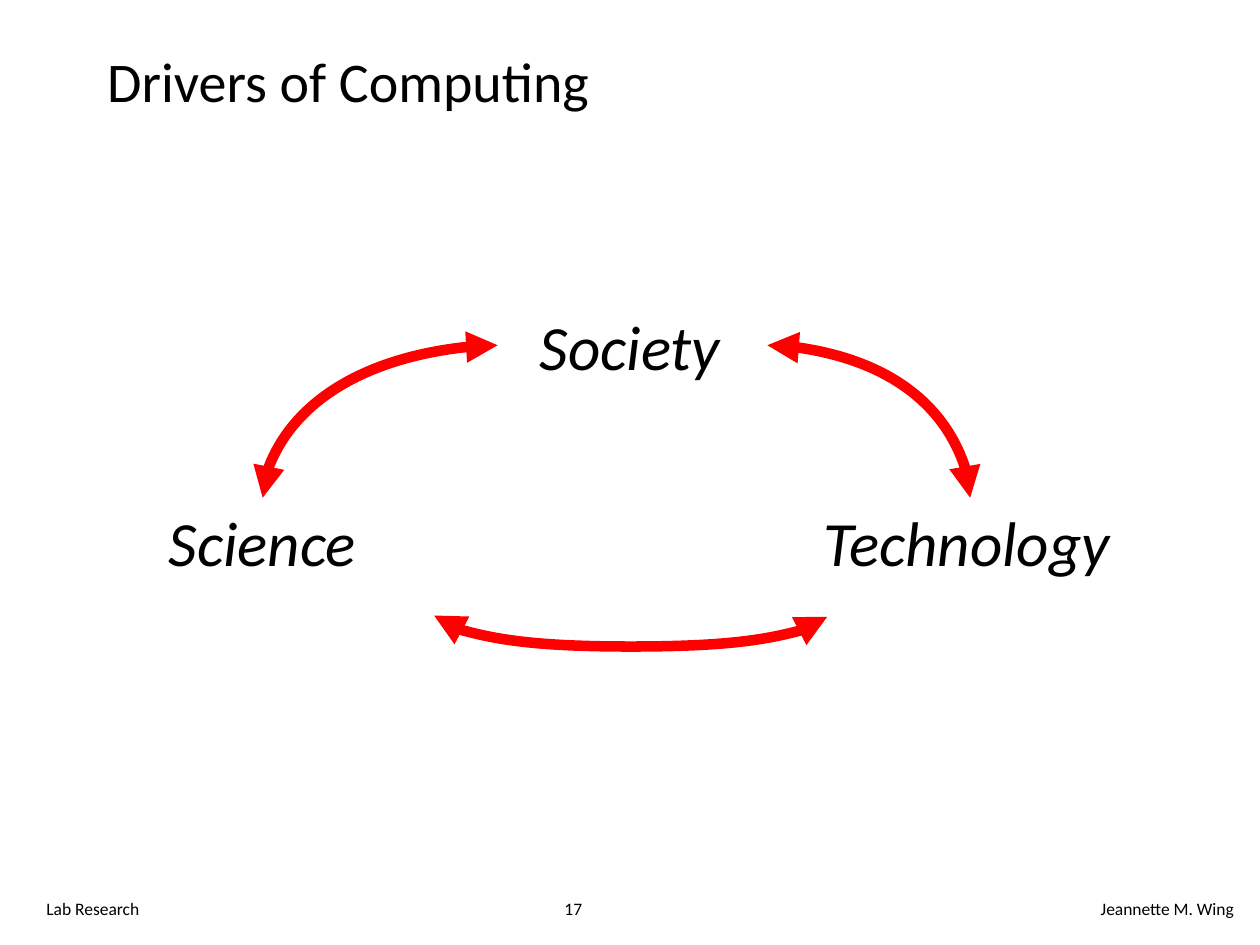
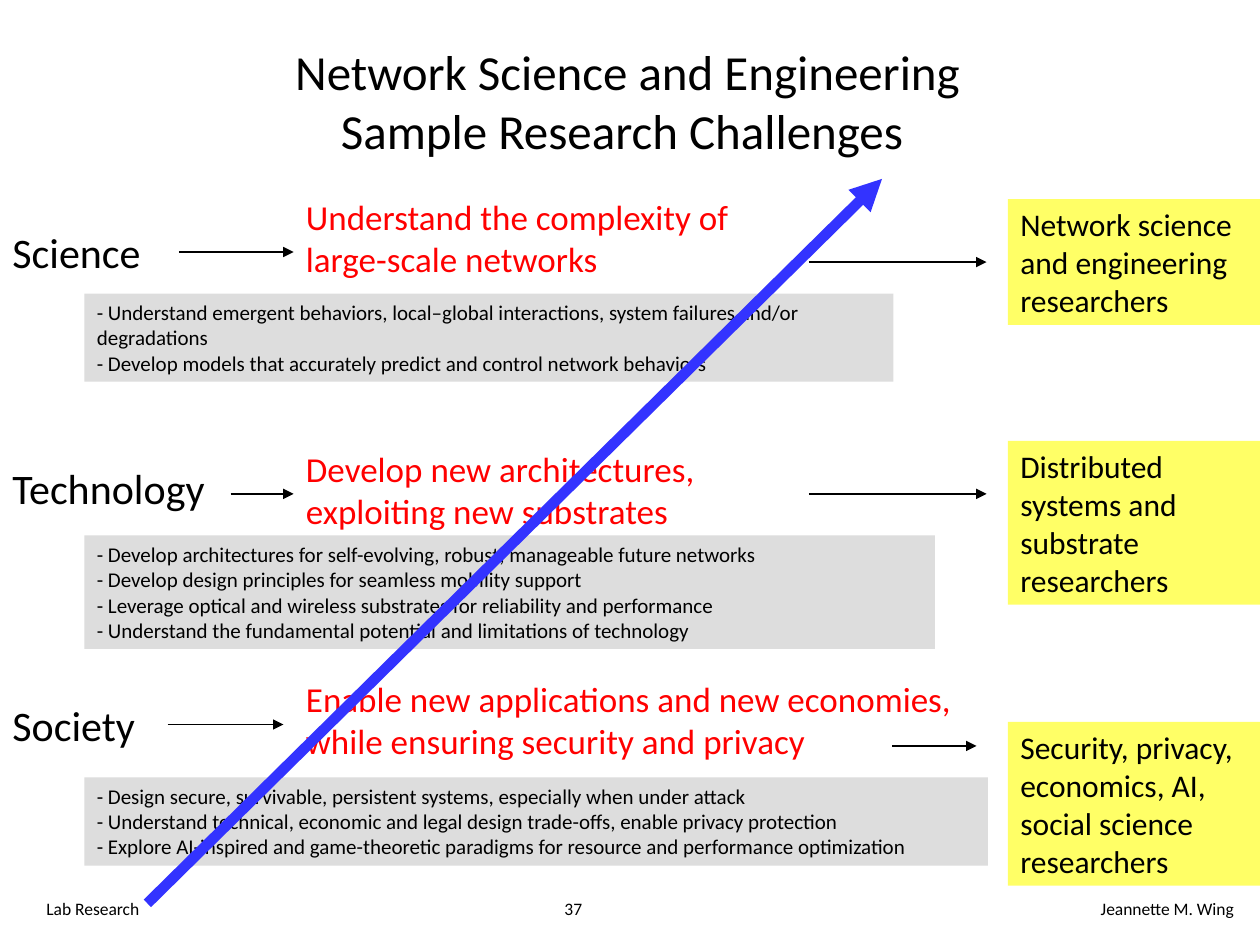
from dataclasses import dataclass

from lxml import etree
from pptx import Presentation
from pptx.dml.color import RGBColor
from pptx.enum import shapes, text
from pptx.oxml import ns
from pptx.util import Inches, Pt

FONT = "Calibri"
BLACK, RED, BLUE = "000000", "FF0000", "3333FF"
GREY, YELLOW = "DDDDDD", "FFFF66"
LEFT, CENTER, RIGHT = text.PP_ALIGN.LEFT, text.PP_ALIGN.CENTER, text.PP_ALIGN.RIGHT
STRAIGHT, CURVE = shapes.MSO_CONNECTOR.STRAIGHT, shapes.MSO_CONNECTOR.CURVE


def rgb(value):
    return RGBColor.from_string(value)


# Shared helpers
def write(tf, words, size, color=BLACK, align=LEFT, italic=False):
    tf.text = words
    for p in tf.paragraphs:
        p.alignment = align
        for r in p.runs:
            r.font.name = FONT
            r.font.size = Pt(size)
            r.font.italic = italic
            r.font.color.rgb = rgb(color)


def add_text(s, box, words, size, wrap=True, **style):
    sp = s.shapes.add_textbox(*map(Inches, box))
    sp.text_frame.word_wrap = wrap
    write(sp.text_frame, words, size, **style)
    return sp


def add_panel(s, box, words, size, fill):
    sp = s.shapes.add_shape(shapes.MSO_SHAPE.RECTANGLE, *map(Inches, box))
    sp.shadow.inherit = False
    sp.fill.solid()
    sp.fill.fore_color.rgb = rgb(fill)
    sp.line.fill.background()
    tf = sp.text_frame
    tf.word_wrap = True
    tf.vertical_anchor = text.MSO_ANCHOR.TOP
    write(tf, words, size)
    return sp


def add_arrow(s, start, end, color=BLACK, width=0.75, kind=STRAIGHT, both=False):
    c = s.shapes.add_connector(kind, *map(Inches, (*start, *end)))
    c.line.color.rgb = rgb(color)
    c.line.width = Pt(width)
    ln = c.line._get_or_add_ln()
    for tag in ["a:headEnd", "a:tailEnd"] if both else ["a:tailEnd"]:
        etree.SubElement(ln, ns.qn(tag), type="triangle")
    etree.SubElement(c._element.spPr, ns.qn("a:effectLst"))
    return c


def bend(c, preset, turn=0, reach=None):
    """Choose the curve's preset, its rotation in degrees and its bulge."""
    c._element.spPr.find(ns.qn("a:xfrm")).set("rot", str(turn * 60000))
    geom = c._element.spPr.find(ns.qn("a:prstGeom"))
    geom.set("prst", preset)
    if reach is not None:
        guides = geom.find(ns.qn("a:avLst"))
        if guides is None:
            guides = etree.SubElement(geom, ns.qn("a:avLst"))
        etree.SubElement(guides, ns.qn("a:gd"), name="adj1",
                         fmla=f"val {round(reach * 100000)}")


def add_footer(s, number):
    for left, width, words, align in [(0.27, 2.08, "Lab Research", LEFT),
                                      (3.51, 2.08, str(number), CENTER),
                                      (6.91, 2.98, "Jeannette M. Wing", RIGHT)]:
        add_text(s, (left, 7.08, width, 0.33), words, 10, align=align)


def new_slide(prs, number, title, box, size, align):
    s = prs.slides.add_slide(prs.slide_layouts[5])
    sp = s.shapes.title
    sp.left, sp.top, sp.width, sp.height = map(Inches, box)
    tf = sp.text_frame
    tf.auto_size = text.MSO_AUTO_SIZE.NONE
    tf.vertical_anchor = text.MSO_ANCHOR.MIDDLE
    write(tf, title, size, align=align)
    add_footer(s, number)
    return s


# Cycle of three drivers
def add_driver_cycle(s, x, y):
    style = dict(size=36, italic=True)
    science = add_text(s, (x, y + 1.56, 1.69, 0.7), "Science", wrap=False, **style)
    society = add_text(s, (x + 2.71, y, 2.1, 0.7), "Society", align=CENTER, **style)
    technology = add_text(s, (x + 5.2, y + 1.56, 2.52, 0.7), "Technology",
                          wrap=False, **style)

    curve = dict(color=RED, width=6, kind=CURVE, both=True)
    to_science = add_arrow(s, (x + 2.71, y + 0.35), (x + 0.85, y + 1.56), **curve)
    to_science.begin_connect(society, 1)
    to_science.end_connect(science, 0)
    bend(to_science, "curvedConnector2")

    to_technology = add_arrow(s, (x + 4.85, y + 0.35), (x + 6.46, y + 1.56), **curve)
    to_technology.end_connect(technology, 0)
    bend(to_technology, "curvedConnector2")

    # A thin upright curve, turned to lie below the two lower words
    across = add_arrow(s, (x + 3.77, y + 0.94), (x + 3.76, y + 4.06), **curve)
    bend(across, "curvedConnector3", turn=270, reach=25)


# Rows of research challenges; offsets are measured from the row's top
@dataclass
class Challenge:
    top: float
    label: str
    label_dy: float
    label_width: float
    goal: str
    goal_width: float
    details: list
    details_box: tuple  # dy, width, height
    arrow_in: tuple     # start, end, dy
    arrow_out: tuple
    people: str
    people_box: tuple   # dy, height


CHALLENGES = [
    Challenge(1.5, "Science", 0.25, 1.42,
              "Understand the complexity of large-scale networks", 4.17,
              ["- Understand emergent behaviors, local–global interactions, "
               "system failures and/or degradations",
               "- Develop models that accurately predict and control network behaviors"],
              (0.83, 6.42, 0.7), (1.42, 2.33, 0.5), (6.42, 7.83, 0.58),
              "Network science and engineering researchers", (0.08, 1)),
    Challenge(3.5, "Technology", 0.12, 2.25,
              "Develop new architectures, exploiting new substrates", 4.33,
              ["- Develop architectures for self-evolving, robust, manageable future networks",
               "- Develop design principles for seamless mobility support",
               "- Leverage optical and wireless substrates for reliability and performance",
               "- Understand the fundamental potential and limitations of technology"],
              (0.75, 6.75, 0.9), (1.83, 2.33, 0.42), (6.42, 7.83, 0.42),
              "Distributed systems and substrate researchers", (0, 1.3)),
    Challenge(5.33, "Society", 0.17, 1.67,
              "Enable new applications and new economies, "
              "while ensuring security and privacy", 5.83,
              ["- Design secure, survivable, persistent systems, especially when under attack",
               "- Understand technical, economic and legal design trade-offs, "
               "enable privacy protection",
               "- Explore AI-inspired and game-theoretic paradigms for resource "
               "and performance optimization"],
              (0.84, 7.17, 0.7), (1.33, 2.25, 0.42), (7.08, 7.75, 0.59),
              "Security, privacy, economics, AI, social science researchers", (0.4, 1.3)),
]


def add_challenge(s, row):
    dy, width, height = row.details_box
    add_panel(s, (0.67, row.top + dy, width, height), "\n".join(row.details), 12, GREY)
    label = add_text(s, (0, row.top + row.label_dy, row.label_width, 0.5), row.label, 24)
    add_text(s, (2.33, row.top, row.goal_width, 0.77), row.goal, 20, color=RED)
    dy, height = row.people_box
    add_panel(s, (8, row.top + dy, 2, height), row.people, 18, YELLOW)
    for start, end, dy in (row.arrow_in, row.arrow_out):
        c = add_arrow(s, (start, row.top + dy), (end, row.top + dy))
        if start == row.label_width:
            c.begin_connect(label, 3)


# Slides
def build_drivers(prs):
    s = new_slide(prs, 17, "Drivers of Computing", (0.75, 0.26, 8.5, 0.75), 32, LEFT)
    add_driver_cycle(s, 1.24, 2.39)


def build_challenges(prs):
    s = new_slide(prs, 37, "Network Science and Engineering\vSample Research Challenges ",
                  (0.21, 0.17, 9.54, 1.25), 28, CENTER)
    for row in CHALLENGES:
        add_challenge(s, row)
    add_arrow(s, (1.17, 7.17), (7, 1.42), color=BLUE, width=6)


def main():
    prs = Presentation()
    prs.slide_width, prs.slide_height = Inches(10), Inches(7.5)
    build_drivers(prs)
    build_challenges(prs)
    prs.save("out.pptx")


if __name__ == "__main__":
    main()
